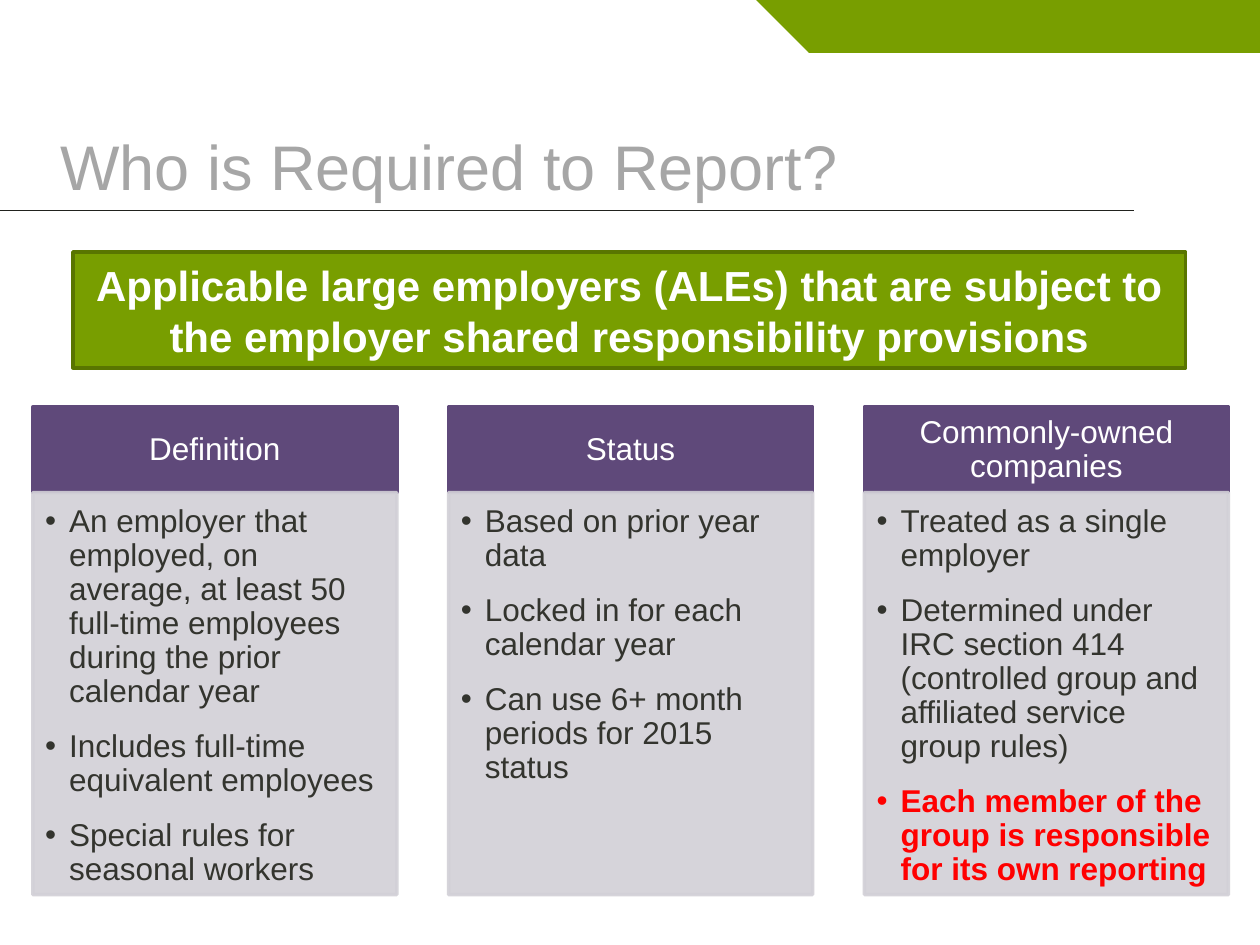
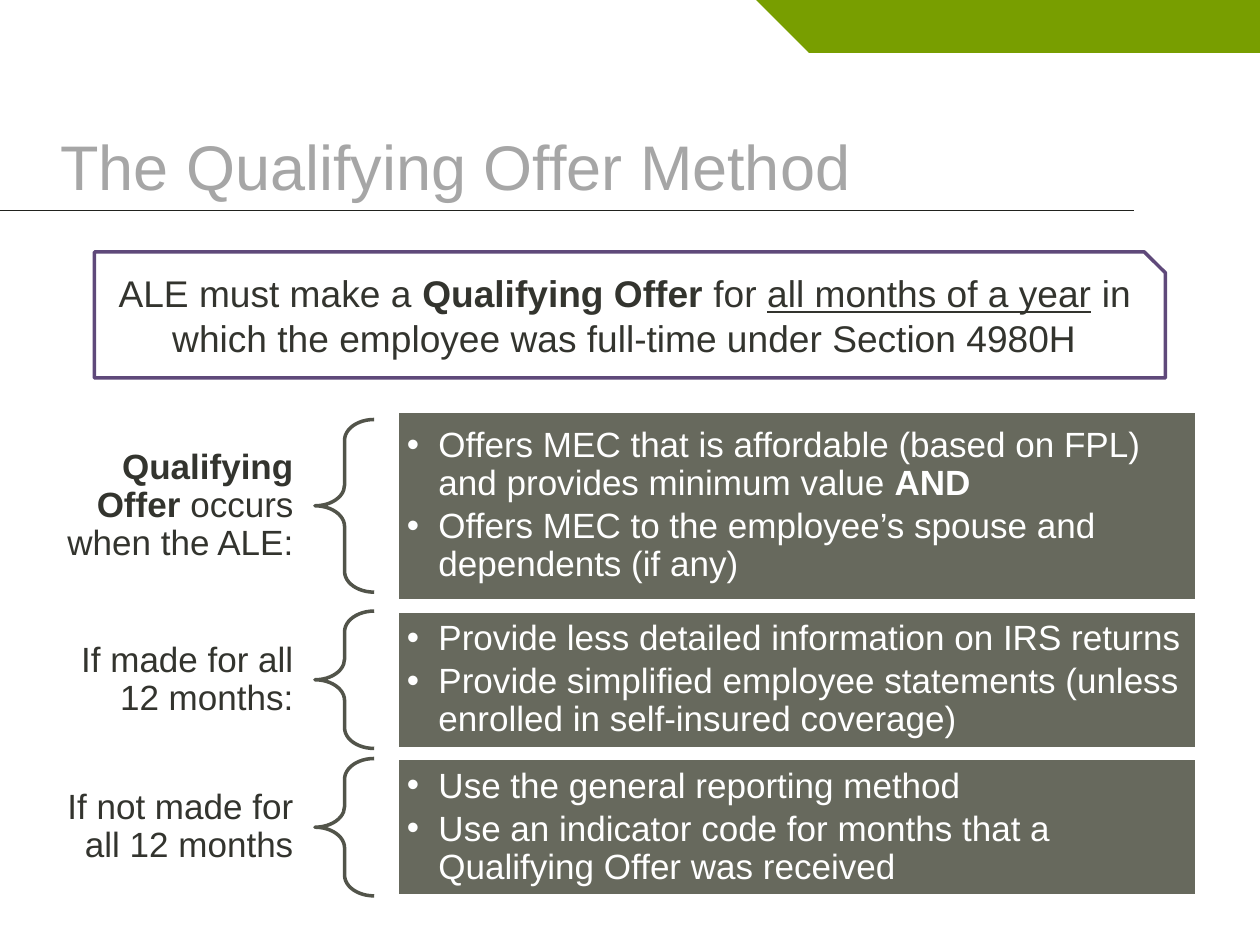
from dataclasses import dataclass

from lxml import etree
from pptx import Presentation
from pptx.dml.color import RGBColor
from pptx.enum.shapes import MSO_CONNECTOR, MSO_SHAPE
from pptx.enum.text import MSO_ANCHOR, PP_ALIGN
from pptx.oxml.ns import qn
from pptx.util import Inches, Pt

RECTANGLE = MSO_SHAPE.RECTANGLE
RIGHT_TRIANGLE = MSO_SHAPE.RIGHT_TRIANGLE
LEFT_BRACE = MSO_SHAPE.LEFT_BRACE
SNIPPED = MSO_SHAPE.SNIP_1_RECTANGLE
STRAIGHT = MSO_CONNECTOR.STRAIGHT
LEFT, CENTER, RIGHT = PP_ALIGN.LEFT, PP_ALIGN.CENTER, PP_ALIGN.RIGHT
TOP, MIDDLE, BOTTOM = MSO_ANCHOR.TOP, MSO_ANCHOR.MIDDLE, MSO_ANCHOR.BOTTOM


@dataclass(frozen=True)
class Theme:
    font: str = "Arial"
    green: str = "789E00"
    dark_green: str = "597500"
    purple: str = "5F497A"
    lilac: str = "D2D0D7"
    olive: str = "67695D"
    brace: str = "52544A"
    rule: str = "21221E"
    title: str = "A6A6A6"
    ink: str = "33342E"
    white: str = "FFFFFF"
    red: str = "FF0000"
    title_size: float = 36
    banner_size: float = 24
    offer_size: float = 21.2
    row_size: float = 20
    column_size: float = 18


theme = Theme()


def add_box(slide, kind, position, fill=None, line=None, opacity=None):
    shape = slide.shapes.add_shape(kind, *map(Inches, position))
    shape.shadow.inherit = False
    if fill:
        shape.fill.solid()
        shape.fill.fore_color.rgb = RGBColor.from_string(fill)
    else:
        shape.fill.background()
    if line:
        shape.line.color.rgb = RGBColor.from_string(line)
        shape.line.width = Pt(2)
    else:
        shape.line.fill.background()
    if opacity:
        for color in shape._element.spPr.iter(qn("a:srgbClr")):
            etree.SubElement(color, qn("a:alpha"), val=str(opacity * 1000))
    return shape


def write_text(shape, paragraphs, size, color, align=LEFT, anchor=MIDDLE,
               insets=(0.1, 0.05, 0.1, 0.05), spacing=1, after=0, indent=0):
    frame = shape.text_frame
    frame.word_wrap = True
    frame.vertical_anchor = anchor
    (frame.margin_left, frame.margin_top,
     frame.margin_right, frame.margin_bottom) = map(Inches, insets)
    for index, runs in enumerate(paragraphs):
        paragraph = frame.paragraphs[0] if index == 0 else frame.add_paragraph()
        paragraph.alignment = align
        paragraph.line_spacing = spacing
        paragraph.space_after = Pt(after)
        if indent:
            properties = paragraph._p.get_or_add_pPr()
            properties.set("marL", str(Inches(indent)))
            properties.set("indent", str(-Inches(indent)))
            etree.SubElement(properties, qn("a:buFont"), typeface=theme.font)
            etree.SubElement(properties, qn("a:buChar"), char="•")
        for text, style in runs:
            run = paragraph.add_run()
            run.text = text
            run.font.name = theme.font
            run.font.size = Pt(size)
            run.font.bold = style in ("bold", "alert")
            run.font.underline = style == "underline"
            run_color = theme.red if style == "alert" else color
            run.font.color.rgb = RGBColor.from_string(run_color)


presentation = Presentation()
presentation.slide_width = Inches(10)
presentation.slide_height = Inches(7.5)

slides = []
for title in ("Who is Required to Report?", "The Qualifying Offer Method"):
    slide = presentation.slides.add_slide(presentation.slide_layouts[6])
    rule = slide.shapes.add_connector(
        STRAIGHT, Inches(0), Inches(1.67), Inches(9), Inches(1.67))
    rule.line.color.rgb = RGBColor.from_string(theme.rule)
    rule.line.width = Pt(0.25)
    etree.SubElement(rule._element.spPr, qn("a:effectLst"))
    add_box(slide, RECTANGLE, (6.42, 0, 3.58, 0.42), theme.green)
    corner = add_box(slide, RIGHT_TRIANGLE, (6, 0, 0.42, 0.42), theme.green)
    corner.rotation = 180
    title_box = slide.shapes.add_textbox(
        Inches(0), Inches(0.45), Inches(9.5), Inches(1.21))
    write_text(title_box, [[(title, "")]], theme.title_size, theme.title,
               anchor=BOTTOM, insets=(0.48, 0.05, 0.1, 0.05))
    slides.append(slide)

report_slide, offer_slide = slides

banner = add_box(report_slide, RECTANGLE, (0.58, 2, 8.83, 0.92),
                 theme.green, theme.dark_green)
write_text(banner, [[("Applicable large employers (ALEs) that are subject to "
                      "the employer shared responsibility provisions", "bold")]],
           theme.banner_size, theme.white, CENTER)

columns = [
    ("Definition", [
        [("An employer that employed, on average, at least 50 full-time "
          "employees during the prior calendar year", "")],
        [("Includes full-time equivalent employees", "")],
        [("Special rules for seasonal workers", "")],
    ]),
    ("Status", [
        [("Based on prior year data", "")],
        [("Locked in for each calendar year", "")],
        [("Can use 6+ month periods for 2015 status", "")],
    ]),
    ("Commonly-owned companies", [
        [("Treated as a single employer", "")],
        [("Determined under IRC section 414 (controlled group and affiliated "
          "service group rules)", "")],
        [("Each member of the group is responsible for its own reporting",
          "alert")],
    ]),
]
column_width = 2.89
column_pitch = 3.3
for index, (heading, bullets) in enumerate(columns):
    left = 0.26 + index * column_pitch
    header = add_box(report_slide, RECTANGLE, (left, 3.23, column_width, 0.68),
                     theme.purple, theme.purple)
    write_text(header, [[(heading, "")]], theme.column_size, theme.white, CENTER,
               insets=(0.14, 0.08, 0.14, 0.08), spacing=0.9)
    body = add_box(report_slide, RECTANGLE, (left, 3.91, column_width, 3.19),
                   theme.lilac, theme.lilac, opacity=90)
    write_text(body, bullets, theme.column_size, theme.ink, anchor=TOP,
               insets=(0.1, 0.1, 0.14, 0.16), spacing=0.9, after=12, indent=0.19)

rows = [
    (1.51, 0.07, [("Qualifying Offer ", "bold"), ("occurs when the ALE:", "")], [
        [("Offers MEC that is affordable (based on FPL) and provides minimum "
          "value ", ""), ("AND", "bold")],
        [("Offers MEC to the employee’s spouse and dependents (if any)", "")],
    ]),
    (1.09, 0, [("If made for all 12 months:", "")], [
        [("Provide less detailed information on IRS returns", "")],
        [("Provide simplified employee statements (unless enrolled in "
          "self-insured coverage)", "")],
    ]),
    (1.09, 0, [("If not made for all 12 months", "")], [
        [("Use the general reporting method", "")],
        [("Use an indicator code for months that a Qualifying Offer was "
          "received", "")],
    ]),
]
row_gap = 0.08
row_top = 3.26
for height, brace_inset, label, bullets in rows:
    label_box = offer_slide.shapes.add_textbox(
        Inches(0.16), Inches(row_top), Inches(2.33), Inches(height))
    write_text(label_box, [label], theme.row_size, theme.ink, RIGHT,
               insets=(0.16, 0.06, 0.16, 0.06), spacing=0.9)
    brace = add_box(
        offer_slide, LEFT_BRACE,
        (2.5, row_top + brace_inset, 0.47, height - 2 * brace_inset),
        line=theme.brace)
    brace.adjustments[0] = 0.35
    brace.adjustments[1] = 0.5
    panel = add_box(offer_slide, RECTANGLE, (3.15, row_top, 6.35, height),
                    theme.olive, theme.white)
    write_text(panel, bullets, theme.row_size, theme.white,
               insets=(0.08, 0.08, 0.08, 0.08), spacing=0.9, after=3, indent=0.25)
    row_top += height + row_gap

offer = add_box(offer_slide, SNIPPED, (0.75, 2, 8.5, 1), theme.white, theme.purple)
write_text(offer, [[("ALE must make a ", ""), ("Qualifying Offer", "bold"),
                    (" for ", ""), ("all months of a year", "underline"),
                    (" in which the employee was full-time under Section 4980H",
                     "")]],
           theme.offer_size, theme.ink, CENTER, insets=(0.1, 0.05, 0.1, 0.13))

presentation.save("out.pptx")
